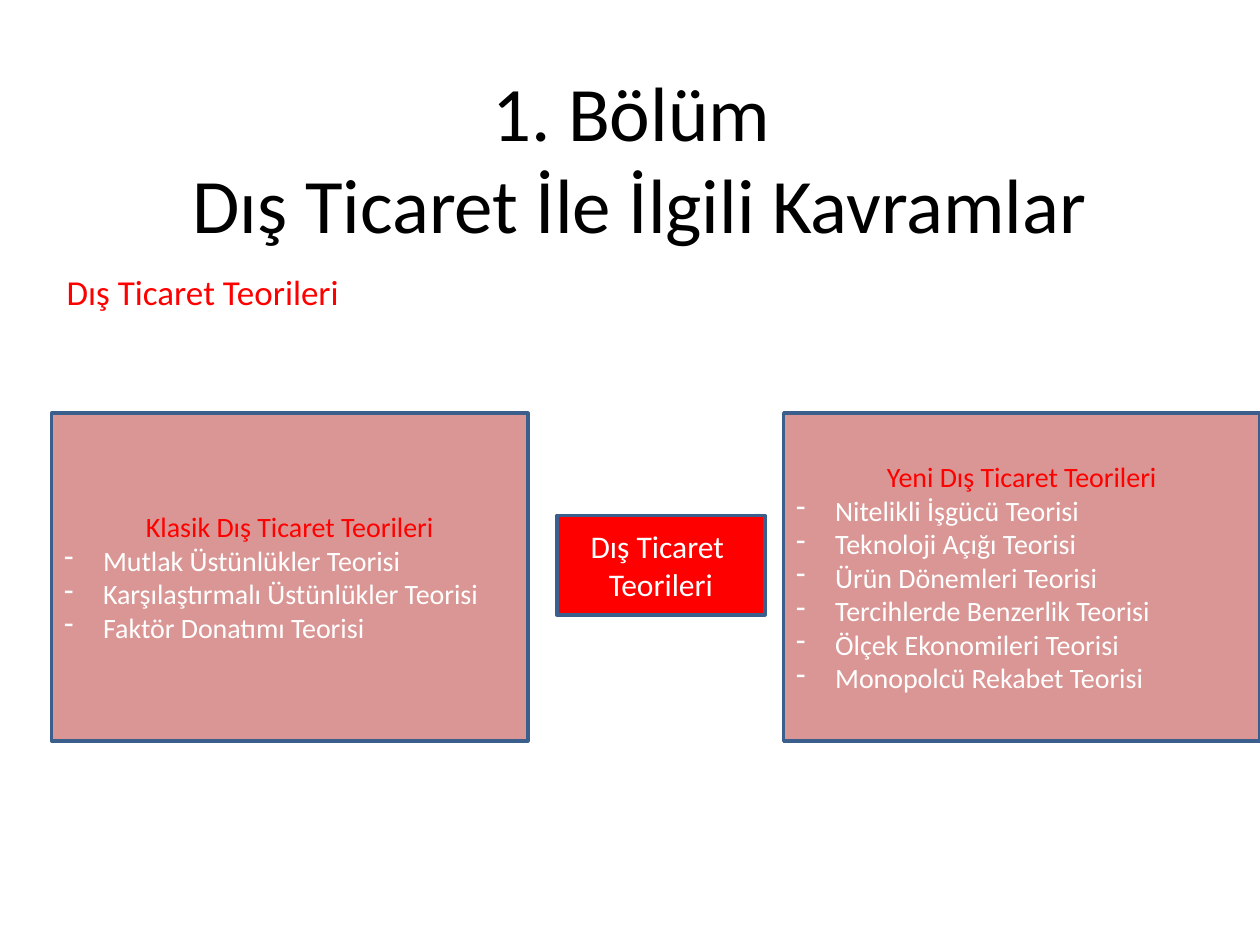
from pptx import Presentation
from pptx.dml.color import RGBColor
from pptx.enum.shapes import MSO_SHAPE
from pptx.enum.text import MSO_ANCHOR, MSO_AUTO_SIZE, PP_ALIGN
from pptx.oxml.ns import qn
from pptx.util import Inches, Pt
from lxml import etree

COLORS = {"black": "000000", "white": "FFFFFF", "red": "FF0000",
          "rose": "D99694", "outline": "3A5F8C"}


def write(paragraph, text, size=16, color="white", align=PP_ALIGN.CENTER, bullet=None):
    paragraph.text = text
    paragraph.alignment = align
    for run in paragraph.runs:
        run.font.name = "Calibri"
        run.font.size = Pt(size)
        run.font.color.rgb = RGBColor.from_string(COLORS[color])
    if bullet:
        properties = paragraph._p.get_or_add_pPr()
        properties.set("marL", str(Inches(0.31)))
        properties.set("indent", str(-Inches(0.31)))
        etree.SubElement(properties, qn("a:buChar")).set("char", bullet)


def add_box(slide, left, top, width, height, fill):
    shape = slide.shapes.add_shape(MSO_SHAPE.RECTANGLE, Inches(left), Inches(top),
                                   Inches(width), Inches(height))
    shape.shadow.inherit = False
    shape.fill.solid()
    shape.fill.fore_color.rgb = RGBColor.from_string(COLORS[fill])
    shape.line.color.rgb = RGBColor.from_string(COLORS["outline"])
    shape.line.width = Pt(2)
    shape.text_frame.word_wrap = True
    shape.text_frame.vertical_anchor = MSO_ANCHOR.MIDDLE
    return shape.text_frame


presentation = Presentation()
presentation.slide_width = Inches(10)
presentation.slide_height = Inches(7.5)
slide = presentation.slides.add_slide(presentation.slide_layouts[5])

title = slide.shapes.title
title.left, title.top = Inches(0.83), Inches(0.44)
title.width, title.height = Inches(8.5), Inches(1.61)
title.text_frame.auto_size = MSO_AUTO_SIZE.NONE
title.text_frame.vertical_anchor = MSO_ANCHOR.MIDDLE
write(title.text_frame.paragraphs[0], "1. Bölüm \vDış Ticaret İle İlgili Kavramlar",
      size=44, color="black")

subtitle = slide.shapes.add_textbox(Inches(0.43), Inches(2.1), Inches(9.29), Inches(0.71))
subtitle.text_frame.word_wrap = True
subtitle_paragraph = subtitle.text_frame.paragraphs[0]
subtitle_paragraph.space_before = Pt(4)
write(subtitle_paragraph, "Dış Ticaret Teorileri", size=20, color="red",
      align=PP_ALIGN.JUSTIFY)

center_frame = add_box(slide, 4.42, 4.09, 1.65, 0.79, "red")
write(center_frame.paragraphs[0], "Dış Ticaret ", size=18)
write(center_frame.add_paragraph(), "Teorileri", size=18)

theory_groups = [
    (0.41, "Klasik Dış Ticaret Teorileri",
     ["Mutlak Üstünlükler Teorisi", "Karşılaştırmalı Üstünlükler Teorisi",
      "Faktör Donatımı Teorisi"]),
    (6.22, "Yeni Dış Ticaret Teorileri",
     ["Nitelikli İşgücü Teorisi", "Teknoloji Açığı Teorisi", "Ürün Dönemleri Teorisi",
      "Tercihlerde Benzerlik Teorisi", "Ölçek Ekonomileri Teorisi",
      "Monopolcü Rekabet Teorisi"]),
]
for left, heading, theories in theory_groups:
    frame = add_box(slide, left, 3.28, 3.78, 2.6, "rose")
    write(frame.paragraphs[0], heading, color="red")
    for theory in theories:
        write(frame.add_paragraph(), theory, align=PP_ALIGN.JUSTIFY, bullet="-")

presentation.save("out.pptx")
